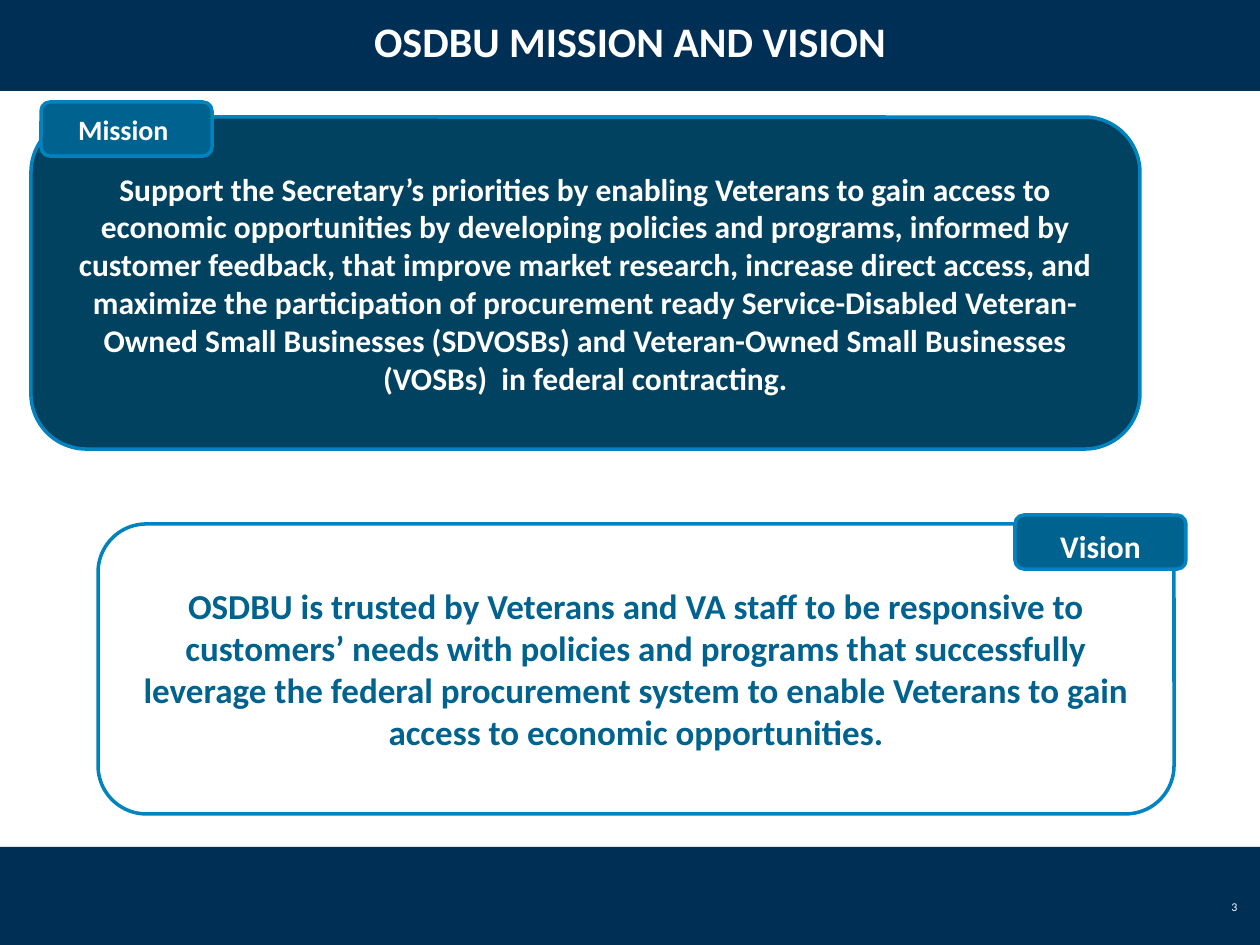
from dataclasses import dataclass

from pptx import Presentation
from pptx import util as u
from pptx.dml.color import RGBColor
from pptx.enum import shapes, text

PX_PER_INCH = 126
SLIDE_W, SLIDE_H = 1260, 945
BAND_H = 101
TAB_W, TAB_H = 171, 54

MISSION = (
    "Support the Secretary’s priorities by enabling Veterans to gain access to "
    "economic opportunities by developing policies and programs, informed by "
    "customer feedback, that improve market research, increase direct access, "
    "and maximize the participation of procurement ready Service-Disabled "
    "Veteran-Owned Small Businesses (SDVOSBs) and Veteran-Owned Small "
    "Businesses (VOSBs)  in federal contracting."
)
VISION = (
    "OSDBU is trusted by Veterans and VA staff to be responsive to customers’ "
    "needs with policies and programs that successfully leverage the federal "
    "procurement system to enable Veterans to gain access to economic "
    "opportunities."
)


def px(n):
    return u.Emu(round(n * u.Inches(1) / PX_PER_INCH))


@dataclass(frozen=True)
class Theme:
    font: str = "Calibri"
    navy: str = "002F56"
    deep: str = "00425F"
    blue: str = "00628E"
    edge: str = "0083BE"
    white: str = "FFFFFF"
    title_size: float = 24
    vision_size: float = 20
    body_size: float = 18
    tab_size: float = 16
    number_size: float = 6.8
    line_width: float = 2


class SlideBuilder:
    def __init__(self, s, theme):
        self.s = s
        self.theme = theme

    def set_text(self, sp, words, size, color, bold=True,
                 align=text.PP_ALIGN.CENTER):
        tf = sp.text_frame
        tf.word_wrap = True
        tf.auto_size = text.MSO_AUTO_SIZE.NONE
        tf.vertical_anchor = text.MSO_ANCHOR.MIDDLE
        tf.text = words
        p = tf.paragraphs[0]
        p.alignment = align
        p.font.name = self.theme.font
        p.font.size = u.Pt(size)
        p.font.bold = bold
        p.font.color.rgb = RGBColor.from_string(color)

    def shape(self, kind, box, fill):
        sp = self.s.shapes.add_shape(kind, *map(px, box))
        sp.shadow.inherit = False
        sp.fill.solid()
        sp.fill.fore_color.rgb = RGBColor.from_string(fill)
        return sp

    def band(self, top):
        """Add a full-width band behind the title."""
        sp = self.shape(shapes.MSO_SHAPE.RECTANGLE,
                        (0, top, SLIDE_W, BAND_H), self.theme.navy)
        sp.line.fill.background()
        self.s.shapes.title.element.addprevious(sp.element)

    def title(self, words, top):
        sp = self.s.shapes.title
        sp.left, sp.top = px(0), px(top)
        sp.width, sp.height = px(SLIDE_W), px(BAND_H)
        self.set_text(sp, words, self.theme.title_size, self.theme.white)

    def panel(self, box, words, fill, size, color):
        sp = self.shape(shapes.MSO_SHAPE.ROUNDED_RECTANGLE, box, fill)
        sp.line.color.rgb = RGBColor.from_string(self.theme.edge)
        sp.line.width = u.Pt(self.theme.line_width)
        self.set_text(sp, words, size, color)
        return sp

    def tab(self, left, top, words, size, drop=0):
        """Add a panel label, its text lowered by drop px."""
        sp = self.panel((left, top, TAB_W, TAB_H), words,
                        self.theme.blue, size, self.theme.white)
        sp.text_frame.margin_top = px(2 * drop)
        sp.text_frame.margin_bottom = 0

    def page_number(self, box, number):
        sp = self.s.shapes.add_textbox(*map(px, box))
        self.set_text(sp, number, self.theme.number_size, self.theme.white,
                      bold=False, align=text.PP_ALIGN.RIGHT)


def main():
    prs = Presentation()
    prs.slide_width, prs.slide_height = px(SLIDE_W), px(SLIDE_H)
    theme = Theme()
    page = SlideBuilder(prs.slides.add_slide(prs.slide_layouts[5]), theme)

    header_top, footer_top = -10, 847
    for top in (footer_top, header_top):
        page.band(top)
    page.title("OSDBU MISSION AND VISION", header_top)
    page.page_number((1197, 882, 53, 50), "3")

    page.panel((31, 117, 1109, 332), MISSION,
               theme.deep, theme.body_size, theme.white)
    page.tab(41, 102, "Mission ", theme.tab_size)
    page.panel((98, 524, 1076, 290), VISION,
               theme.white, theme.vision_size, theme.blue)
    page.tab(1015, 515, "Vision", theme.body_size, drop=4)

    prs.save("out.pptx")


if __name__ == "__main__":
    main()
